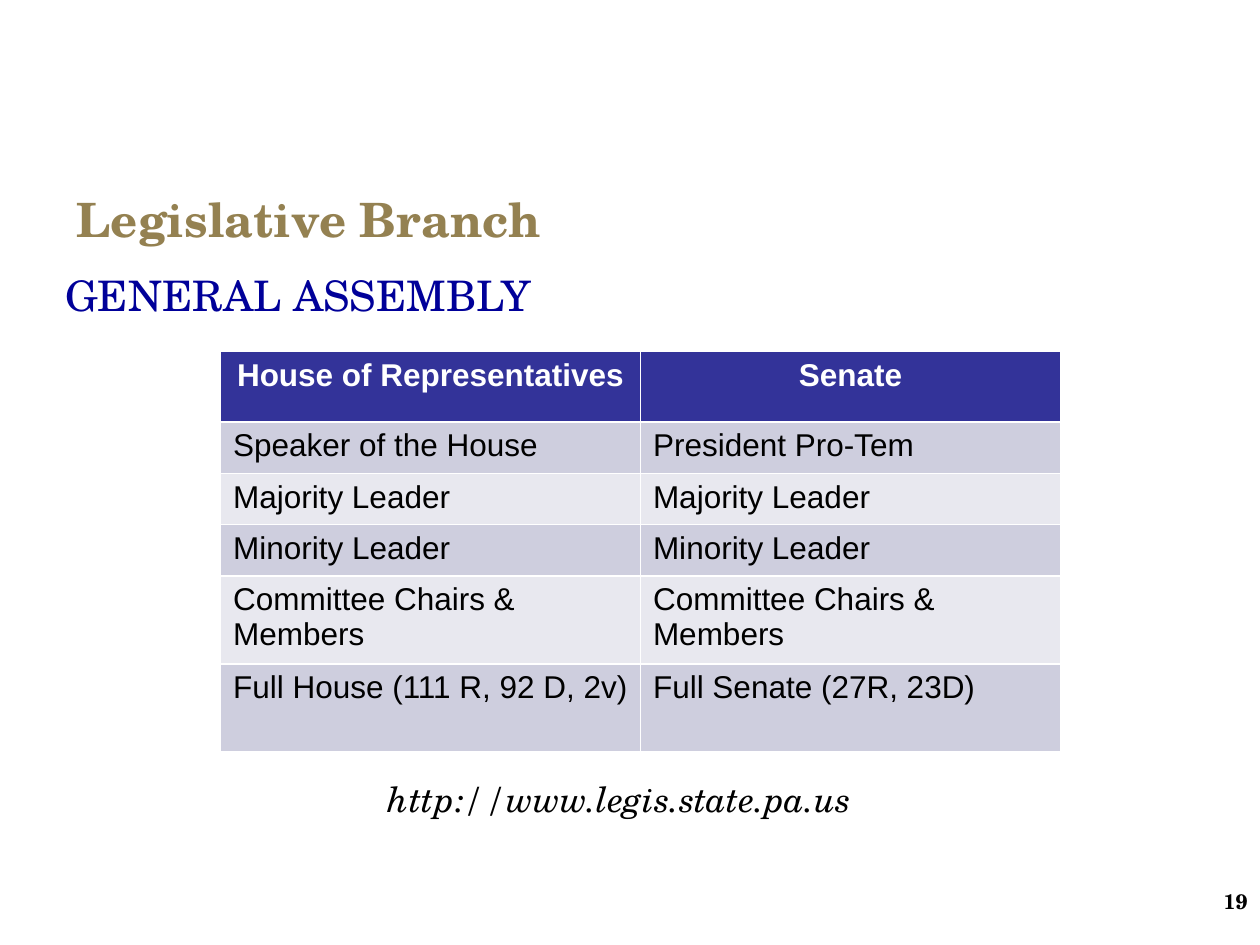
"""Build the Legislative Branch slide with its table of chamber leaders."""
from pptx import Presentation
from pptx.dml.color import RGBColor as Color
from pptx.enum.text import MSO_ANCHOR as Anchor, PP_ALIGN as Align
from pptx.util import Pt

GOLD = Color(0x94, 0x81, 0x51)
BLUE = Color(0x00, 0x00, 0x99)
NAVY = Color(0x33, 0x33, 0x99)
DARK = Color(0xCE, 0xCE, 0xDE)
LIGHT = Color(0xE8, 0xE8, 0xEF)
BLACK = Color(0x00, 0x00, 0x00)
WHITE = Color(0xFF, 0xFF, 0xFF)

HEADS = ("House of Representatives", "Senate")
ROWS = (
    ("Speaker of the House", "President Pro-Tem"),
    ("Majority Leader", "Majority Leader"),
    ("Minority Leader", "Minority Leader"),
    ("Committee Chairs & Members", "Committee Chairs & Members"),
    ("Full House (111 R, 92 D, 2v)", "Full Senate (27R, 23D)"),
)
HIGHS = (40.3, 29.3, 29.3, 29.3, 50.4, 50.4)


class Page:
    """Hold the fonts and the current slide."""

    serif = "TeX Gyre Schola"
    sans = "Arial"

    def __init__(self, deck):
        """Add a title-only slide to the deck."""
        self.slide = deck.slides.add_slide(deck.slide_layouts[5])

    def style(self, frame, text, size, color, face=serif,
              align=Align.LEFT, bold=False, slant=False):
        """Set the text of a frame and format it."""
        frame.text = text
        frame.word_wrap = True
        para = frame.paragraphs[0]
        para.alignment = align
        font = para.runs[0].font
        font.name, font.size = face, Pt(size)
        font.bold, font.italic = bold, slant
        font.color.rgb = color

    def title(self, text, left, top, width, height):
        """Place and fill the title."""
        shape = self.slide.shapes.title
        shape.left, shape.top = Pt(left), Pt(top)
        shape.width, shape.height = Pt(width), Pt(height)
        self.style(shape.text_frame, text, 27, GOLD, bold=True)
        shape.text_frame.vertical_anchor = Anchor.MIDDLE

    def text(self, text, left, top, width, height, size, color, **looks):
        """Add a text box."""
        box = self.slide.shapes.add_textbox(
            Pt(left), Pt(top), Pt(width), Pt(height))
        self.style(box.text_frame, text, size, color, **looks)

    def table(self, left, top, width):
        """Add the table with a header and banded rows."""
        data = (HEADS, *ROWS)
        grid = self.slide.shapes.add_table(
            len(data), len(HEADS), Pt(left), Pt(top),
            Pt(width), Pt(sum(HIGHS))).table
        for i, (row, high) in enumerate(zip(data, HIGHS)):
            grid.rows[i].height = Pt(high)
            head = i == 0
            fill = NAVY if head else DARK if i % 2 else LIGHT
            for j, text in enumerate(row):
                cell = grid.cell(i, j)
                cell.fill.solid()
                cell.fill.fore_color.rgb = fill
                self.style(cell.text_frame, text, 18,
                           WHITE if head else BLACK, face=self.sans,
                           align=Align.CENTER if head else Align.LEFT,
                           bold=head)


def main():
    """Compose and save the slide."""
    deck = Presentation()
    deck.slide_width, deck.slide_height = Pt(720), Pt(540)
    page = Page(deck)
    page.title("Legislative Branch", 36.7, 101.5, 648, 46.8)
    page.text("GENERAL ASSEMBLY", 30.2, 150.5, 648, 36, 24, BLUE)
    page.table(126, 200.9, 480)
    page.text("http://www.legis.state.pa.us", 30.2, 441, 648, 32, 20, BLACK,
              align=Align.CENTER, slant=True)
    page.text("19", 613.4, 504, 106.6, 21.6, 12, BLACK,
              align=Align.RIGHT, bold=True)
    deck.save("out.pptx")


if __name__ == "__main__":
    main()
